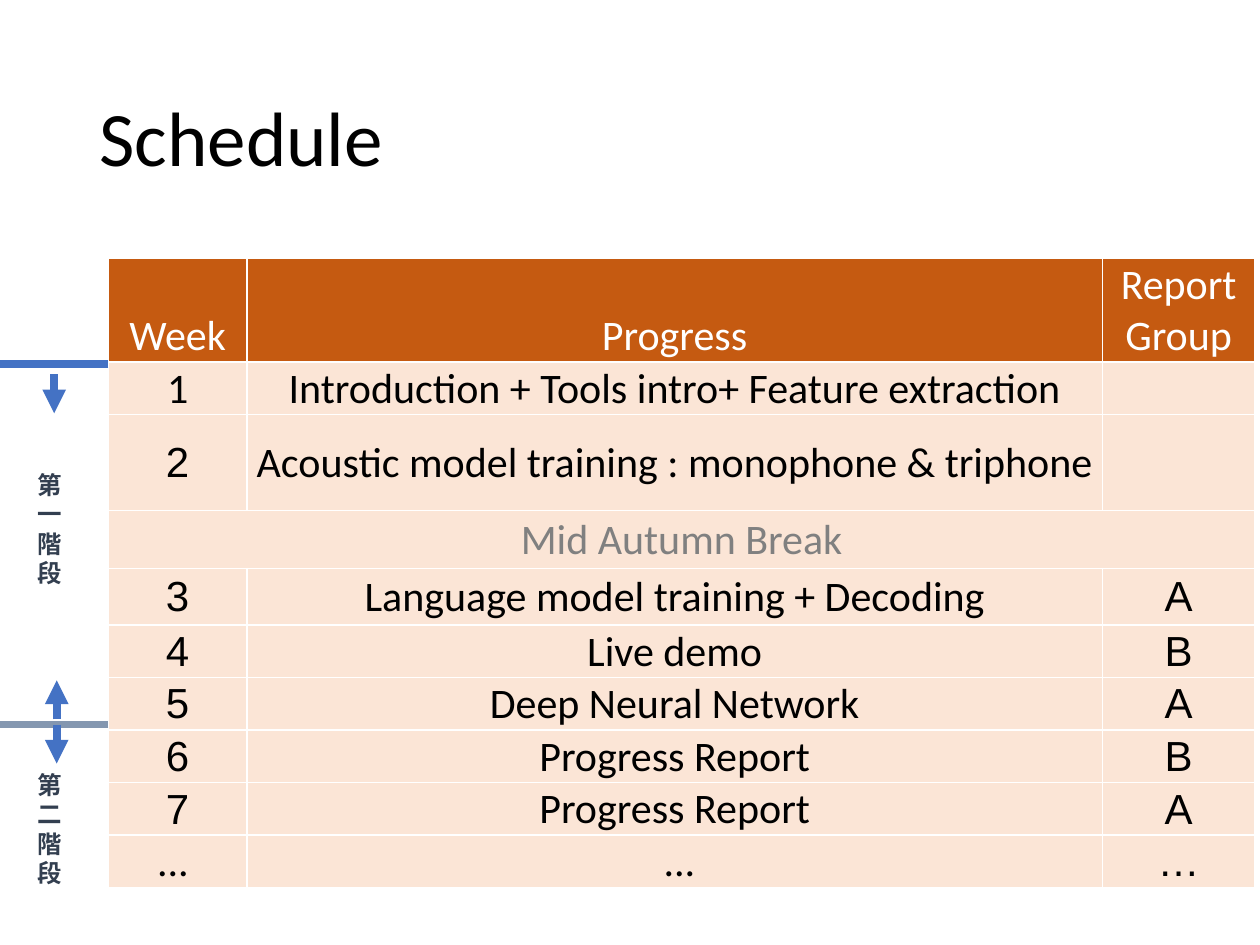
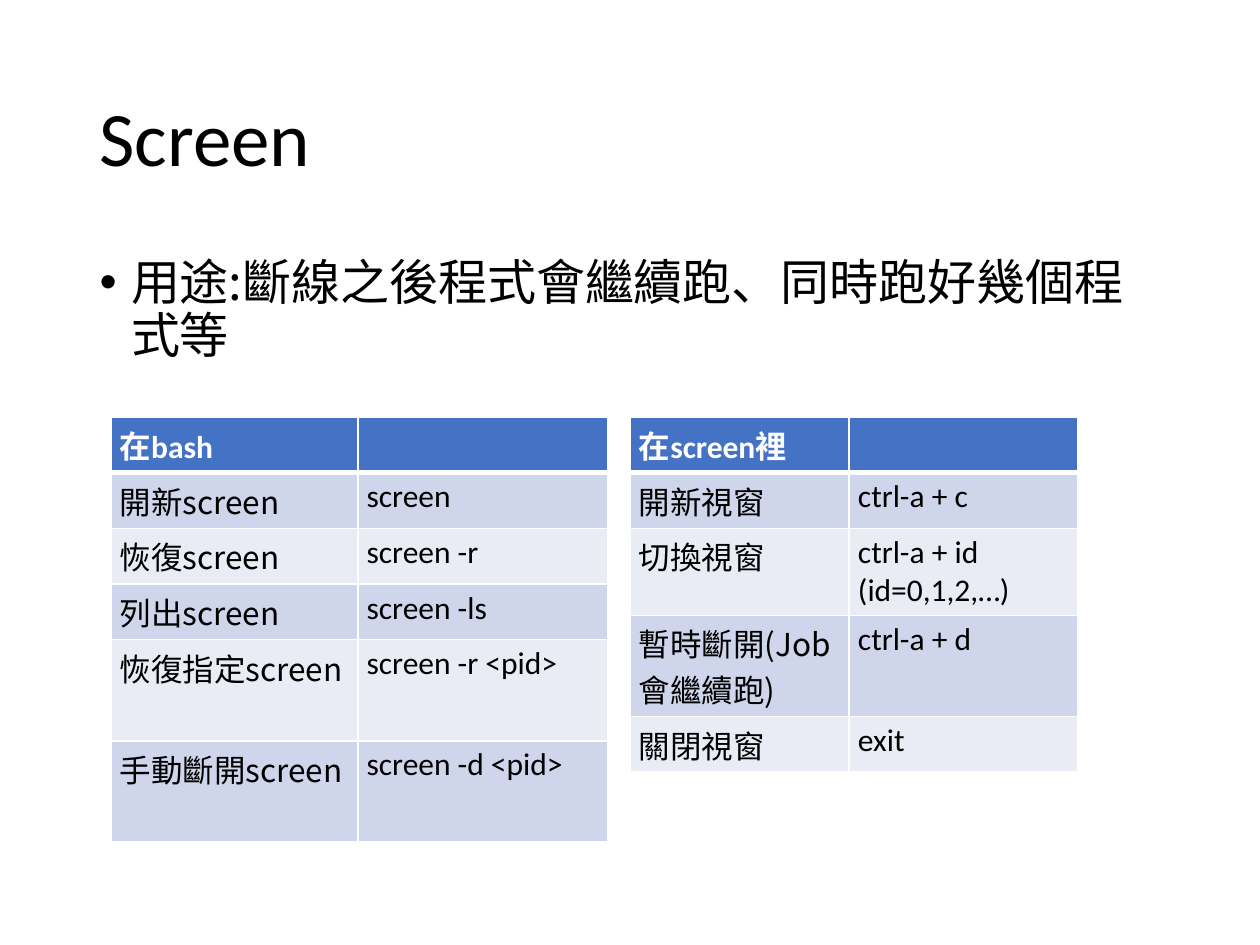
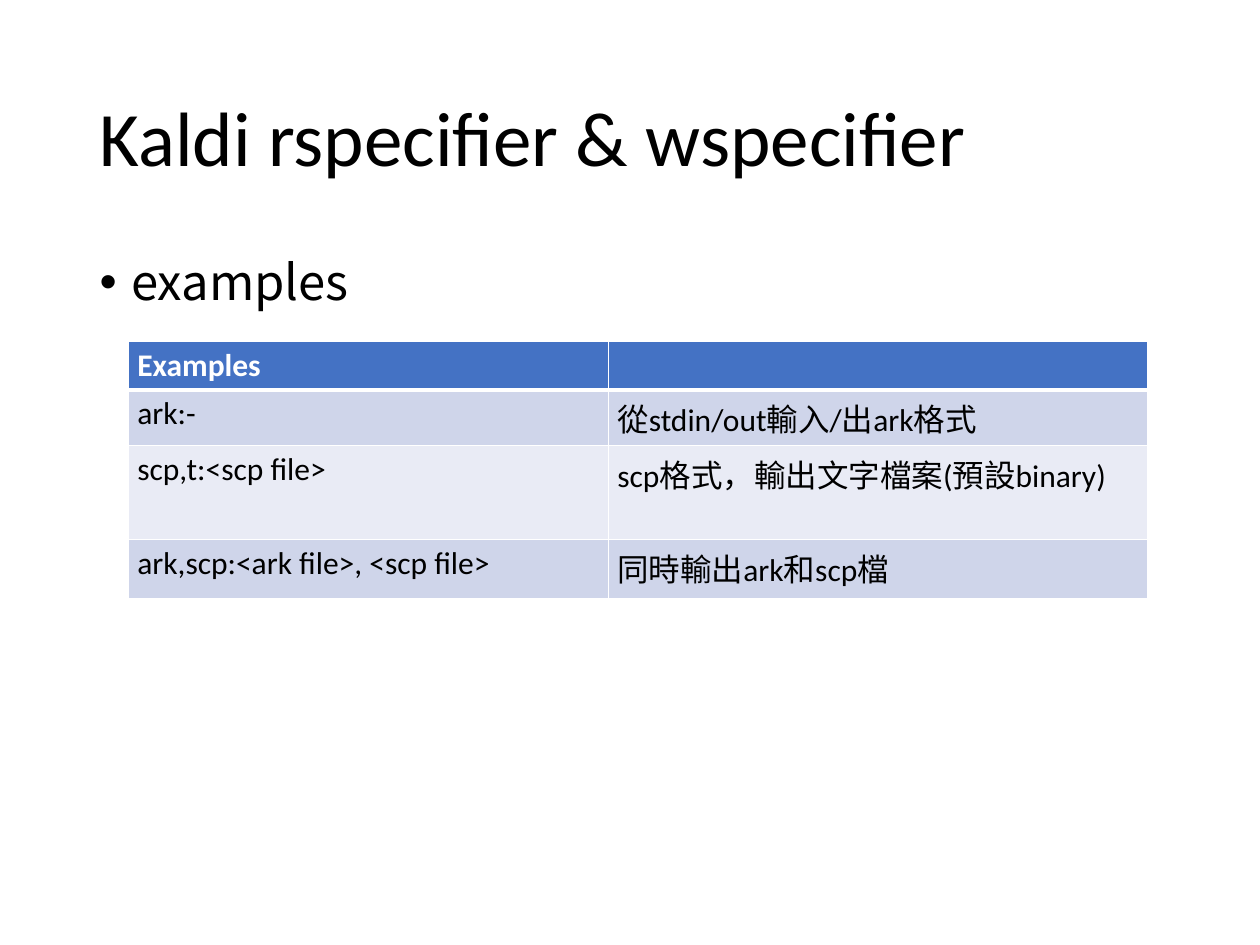
from dataclasses import dataclass

from lxml import etree
from pptx import Presentation
from pptx.dml.color import RGBColor
from pptx.enum.shapes import MSO_CONNECTOR
from pptx.enum.text import MSO_ANCHOR, MSO_AUTO_SIZE, PP_ALIGN
from pptx.oxml.ns import qn
from pptx.util import Inches, Pt

STRAIGHT = MSO_CONNECTOR.STRAIGHT
TOP, MIDDLE, BOTTOM = MSO_ANCHOR.TOP, MSO_ANCHOR.MIDDLE, MSO_ANCHOR.BOTTOM
LEFT, CENTER = PP_ALIGN.LEFT, PP_ALIGN.CENTER
NO_FIT, GROW = MSO_AUTO_SIZE.NONE, MSO_AUTO_SIZE.SHAPE_TO_FIT_TEXT
LAYOUT_BODY, LAYOUT_TITLE = 1, 5


@dataclass(frozen=True)
class Theme:
    latin: str = "Calibri"
    cjk: str = "Noto Sans CJK SC"
    mark: str = "Arial"
    black: str = "000000"
    white: str = "FFFFFF"
    gray: str = "808080"
    blue: str = "4472C4"
    slate: str = "8497B0"
    navy: str = "333F50"
    rust: str = "C55A11"
    peach: str = "FBE5D6"
    bands: tuple = ("CFD5EA", "E9EBF5")
    title: int = 44
    body: int = 28
    schedule: int = 24
    cell: int = 18
    phase: int = 14


T = Theme()

TITLE_BOX = (0.69, 0.4, 8.62, 1.45)
BODY_BOX = (0.69, 2, 8.62, 4.76)

SCHEDULE = [
    ("Week", "Progress", "Report\nGroup"),
    ("1", "Introduction + Tools intro+ Feature extraction", ""),
    ("2", "Acoustic model training : monophone & triphone", ""),
    ("Mid Autumn Break", "", ""),
    ("3", "Language model training + Decoding", "A"),
    ("4", "Live demo", "B"),
    ("5", "Deep Neural Network", "A"),
    ("6", "Progress Report", "B"),
    ("7", "Progress Report", "A"),
    ("... ", " ...", "…"),
]
SCHEDULE_COLS = (1.1, 6.79, 1.21)
SCHEDULE_ROWS = (0.76, 0.38, 0.76, 0.46, 0.45) + (0.38,) * 5
BREAK_ROW = 3
ARIAL_MARKS = set("234567AB…")

PHASE_LINES = [
    ((0.86, 5.75), (0, 5.75), T.slate, False),
    ((0.45, 5.71), (0.45, 5.4), T.blue, True),
    ((0.86, 2.89), (0, 2.89), T.blue, False),
    ((0.43, 2.97), (0.43, 3.28), T.blue, True),
    ((0.45, 5.75), (0.45, 6.06), T.blue, True),
]
PHASES = [("第一階段", 3.68), ("第二階段", 6.06)]

BASH = [
    ("在bash", ""),
    ("開新screen", "screen"),
    ("恢復screen", "screen -r"),
    ("列出screen", "screen -ls"),
    ("恢復指定screen", "screen -r <pid>"),
    ("手動斷開screen", "screen -d <pid>"),
]
IN_SCREEN = [
    ("在screen裡", ""),
    ("開新視窗", "ctrl-a + c"),
    ("切換視窗", "ctrl-a + id (id=0,1,2,…)"),
    ("暫時斷開(Job會繼續跑)", "ctrl-a + d"),
    ("關閉視窗", "exit"),
]
EXAMPLES = [
    ("Examples", ""),
    ("ark:-", "從stdin/out輸入/出ark格式"),
    ("scp,t:<scp file>", "scp格式，輸出文字檔案(預設binary)"),
    ("ark,scp:<ark file>, <scp file>", "同時輸出ark和scp檔"),
]

SLIDES = [
    {"title": "Schedule"},
    {
        "title": "Screen",
        "body": "用途:斷線之後程式會繼續跑、同時跑好幾個程式等",
        "tables": [
            (BASH, (0.88, 3.31), (1.96, 1.98), (0.3,) * 6, T.cjk),
            (IN_SCREEN, (5, 3.31), (1.74, 1.81), (0.3,) * 5, T.cjk),
        ],
    },
    {
        "title": "Kaldi rspecifier & wspecifier",
        "body": "examples",
        "tables": [
            (EXAMPLES, (1.02, 2.71), (3.81, 4.28), (0.34, 0.34, 0.47, 0.47), T.latin),
        ],
    },
]


def rgb(color):
    return RGBColor.from_string(color)


def add_run(p, text, size, color, font=T.latin, bold=False):
    r = p.add_run()
    r.text = text
    r.font.size = Pt(size)
    r.font.name = font
    r.font.bold = bold
    r.font.color.rgb = rgb(color)
    ea = etree.SubElement(r.font._element, qn("a:ea"))
    ea.set("typeface", T.cjk)


def place(sp, box):
    sp.left, sp.top, sp.width, sp.height = map(Inches, box)


def add_slide(prs, title, body=None):
    s = prs.slides.add_slide(prs.slide_layouts[LAYOUT_BODY if body else LAYOUT_TITLE])
    parts = [(s.shapes.title, TITLE_BOX, title, T.title, T.latin, MIDDLE)]
    if body:
        parts.append((s.placeholders[1], BODY_BOX, body, T.body, T.cjk, TOP))
    for sp, box, text, size, font, anchor in parts:
        place(sp, box)
        tf = sp.text_frame
        tf.auto_size = NO_FIT
        tf.vertical_anchor = anchor
        p = tf.paragraphs[0]
        p.alignment = LEFT
        p.line_spacing = 0.9
        add_run(p, text, size, T.black, font)
    if body:
        p.space_before = Pt(10)
        pPr = p._p.get_or_add_pPr()
        pPr.set("marL", str(Inches(0.25)))
        pPr.set("indent", str(-Inches(0.25)))
    return s


def set_borders(cell, bottom=1):
    tcPr = cell._tc.get_or_add_tcPr()
    for side, width in (("L", 1), ("R", 1), ("T", 1), ("B", bottom)):
        ln = etree.SubElement(tcPr, qn(f"a:ln{side}"), w=str(Pt(width)))
        fill = etree.SubElement(ln, qn("a:solidFill"))
        etree.SubElement(fill, qn("a:srgbClr"), val=T.white)


def fill_cell(cell, text, fill, size, color, font, bold=False, align=LEFT,
              anchor=TOP, margins=(0.07, 0.04, 0.07, 0.04), bottom=1):
    set_borders(cell, bottom)
    cell.fill.solid()
    cell.fill.fore_color.rgb = rgb(fill)
    cell.vertical_anchor = anchor
    (cell.margin_left, cell.margin_top,
     cell.margin_right, cell.margin_bottom) = map(Inches, margins)
    if not text:
        return
    tf = cell.text_frame
    for i, line in enumerate(text.split("\n")):
        p = tf.add_paragraph() if i else tf.paragraphs[0]
        p.alignment = align
        add_run(p, line, size, color, font, bold)


def add_grid(s, at, cols, rows):
    box = map(Inches, (*at, sum(cols), sum(rows)))
    table = s.shapes.add_table(len(rows), len(cols), *box).table
    table.horz_banding = False
    for col, width in zip(table.columns, cols):
        col.width = Inches(width)
    for row, height in zip(table.rows, rows):
        row.height = Inches(height)
    return table


def add_schedule(s):
    table = add_grid(s, (0.86, 2.05), SCHEDULE_COLS, SCHEDULE_ROWS)
    for i, row in enumerate(SCHEDULE):
        header = i == 0
        color = T.white if header else T.gray if i == BREAK_ROW else T.black
        for j, text in enumerate(row):
            fill_cell(table.cell(i, j), text, T.peach if i else T.rust,
                      T.schedule, color, T.mark if text in ARIAL_MARKS else T.latin,
                      align=CENTER, anchor=BOTTOM if header else MIDDLE,
                      margins=(0.01, 0.01, 0.01, 0))
    table.cell(BREAK_ROW, 0).merge(table.cell(BREAK_ROW, len(SCHEDULE_COLS) - 1))


def add_commands(s, content, at, cols, rows, label_font):
    table = add_grid(s, at, cols, rows)
    for i, row in enumerate(content):
        header = i == 0
        for j, text in enumerate(row):
            font = label_font if i and j == 0 else T.latin
            fill_cell(table.cell(i, j), text,
                      T.blue if header else T.bands[(i - 1) % 2], T.cell,
                      T.white if header else T.black, font, header,
                      bottom=3 if header else 1)


def add_line(s, start, end, color, arrow):
    line = s.shapes.add_connector(STRAIGHT, *map(Inches, (*start, *end)))
    line.line.color.rgb = rgb(color)
    line.line.width = Pt(4.5)
    if arrow:
        etree.SubElement(line.line._get_or_add_ln(), qn("a:tailEnd"), type="triangle")
    etree.SubElement(line._element.spPr, qn("a:effectLst"))


def add_phase(s, text, top):
    sp = s.shapes.add_textbox(*map(Inches, (0.2, top, 0.51, 1.32)))
    tf = sp.text_frame
    tf.word_wrap = True
    tf.auto_size = GROW
    tf._txBody.bodyPr.set("vert", "wordArtVert")
    add_run(tf.paragraphs[0], text, T.phase, T.navy, bold=True)


def main():
    prs = Presentation()
    prs.slide_width, prs.slide_height = Inches(10), Inches(7.5)
    for content in SLIDES:
        s = add_slide(prs, content["title"], content.get("body"))
        if "tables" not in content:
            add_schedule(s)
            for line in PHASE_LINES:
                add_line(s, *line)
            for phase in PHASES:
                add_phase(s, *phase)
        for table in content.get("tables", []):
            add_commands(s, *table)
    prs.save("out.pptx")


if __name__ == "__main__":
    main()
